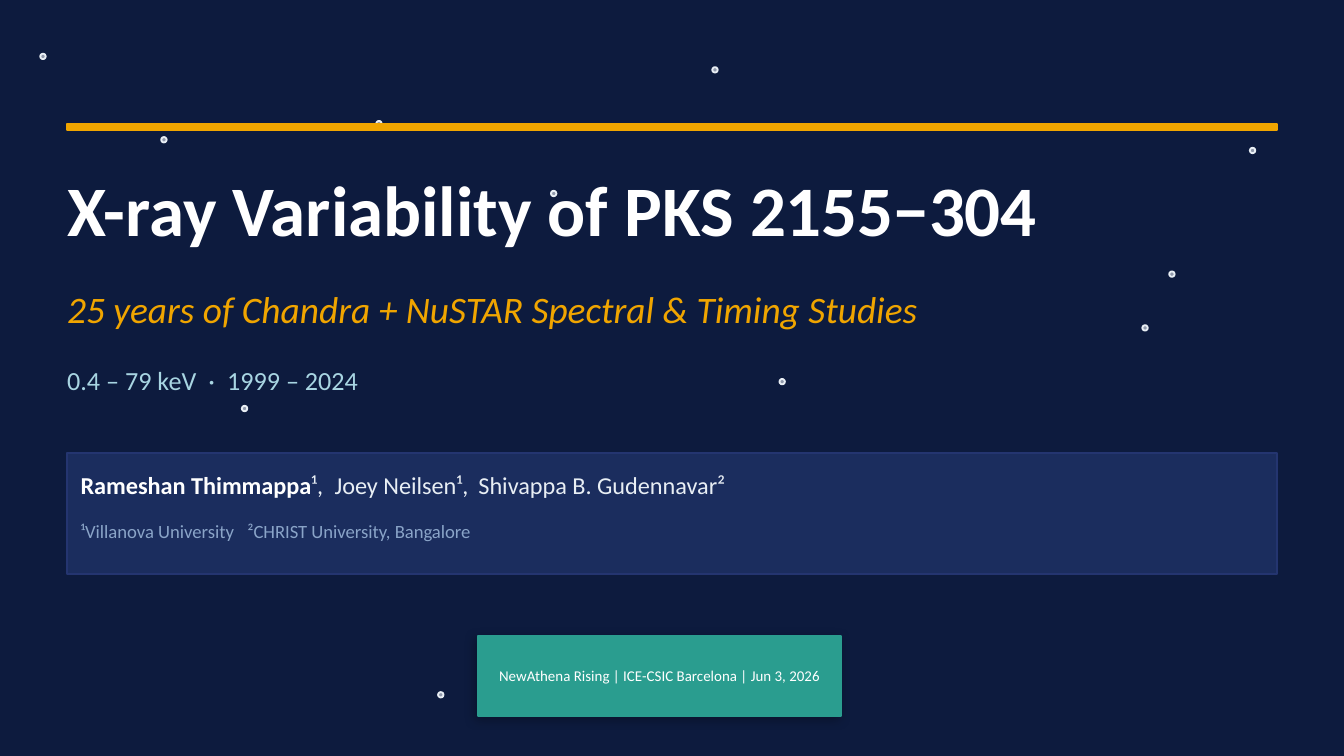
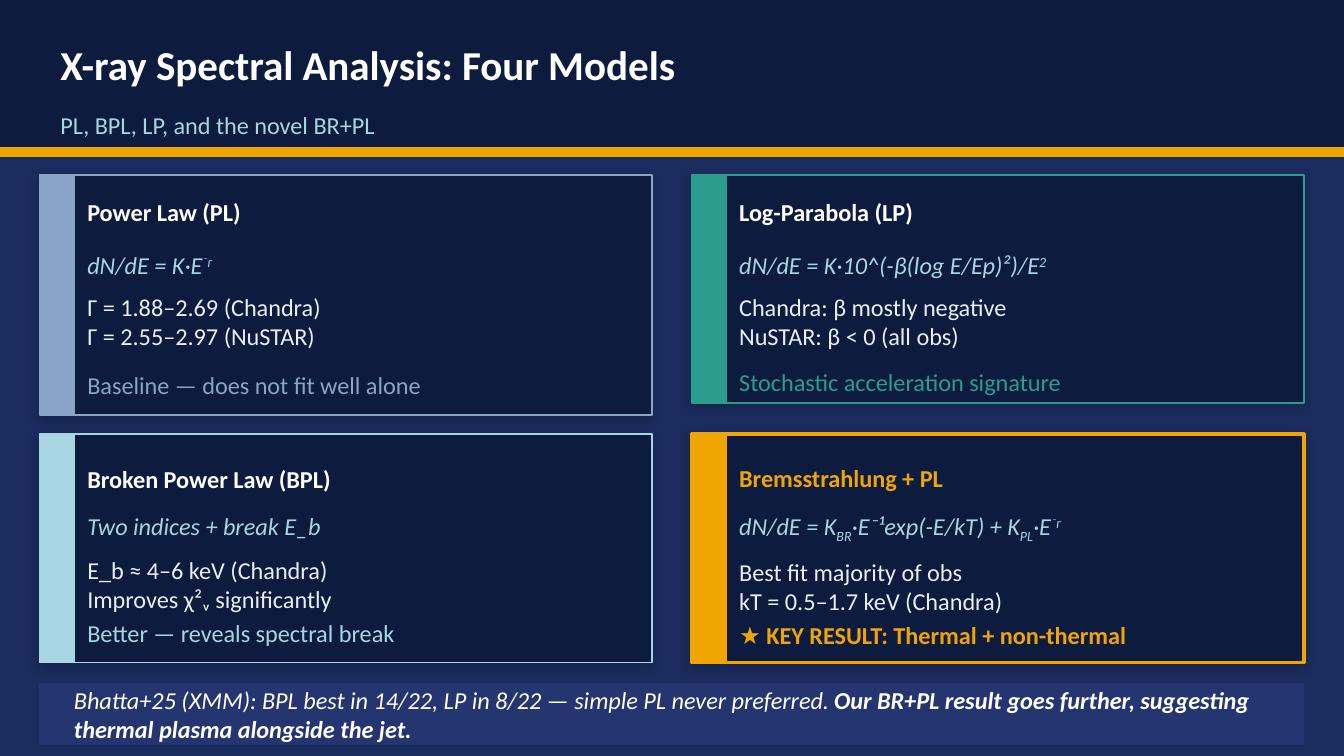
from dataclasses import dataclass
from typing import NamedTuple

import lxml.etree
import pptx
import pptx.dml.color
import pptx.enum.shapes
import pptx.enum.text
import pptx.oxml.ns
import pptx.presentation
import pptx.shapes.autoshape
import pptx.slide
import pptx.text.text
import pptx.util

# Grid of square cells, ten to the inch
COLUMNS, ROWS = 100, 56.25
CELL = pptx.util.Inches(0.1)
BLANK_LAYOUT = 6


# Theme
@dataclass(frozen=True)
class Theme:
    font: str = "Calibri"
    navy: str = "0D1B3E"
    indigo: str = "1B2D5E"
    blue: str = "243570"
    amber: str = "F0A500"
    teal: str = "2A9D8F"
    sky: str = "A8D5E2"
    slate: str = "8AA4C8"
    mist: str = "E8EEF4"
    white: str = "FFFFFF"
    shadow: str = "000000"
    cover_title: float = 38
    title: float = 22
    cover_subtitle: float = 20
    tagline: float = 14
    body: float = 13
    small: float = 10
    tiny: float = 8


THEME = Theme()


# Descriptions of repeated elements, lengths in grid cells
class Frame(NamedTuple):
    left: float
    top: float
    width: float
    height: float


@dataclass(frozen=True)
class Run:
    text: str
    bold: bool | None = None
    color: str | None = None
    baseline: int = 0


Line = list[Run]


@dataclass(frozen=True)
class ModelCard:
    panel: Frame
    color: str
    text_tops: tuple[float, float, float, float]
    heading: str
    formula: Line
    findings: tuple[str, str]
    verdict: str
    key: bool = False


# Drawing functions
def child(parent: lxml.etree._Element, tag: str, **attributes: object) -> lxml.etree._Element:
    element = lxml.etree.SubElement(parent, pptx.oxml.ns.qn(tag))
    for name, value in attributes.items():
        element.set(name, str(value))
    return element


def rgb(color: str) -> pptx.dml.color.RGBColor:
    return pptx.dml.color.RGBColor.from_string(color)


def place(frame: Frame) -> list[int]:
    return [round(length * CELL) for length in frame]


def add_block(
    slide: pptx.slide.Slide,
    frame: Frame,
    fill: str,
    *,
    line: str | None = None,
    line_width: float = 1,
    opacity: int = 100,
    shadow: int = 0,
    kind: pptx.enum.shapes.MSO_SHAPE = pptx.enum.shapes.MSO_SHAPE.RECTANGLE,
) -> pptx.shapes.autoshape.Shape:
    shape = slide.shapes.add_shape(kind, *place(frame))
    shape.fill.solid()
    shape.fill.fore_color.rgb = rgb(fill)
    shape.line.color.rgb = rgb(line or fill)
    shape.line.width = pptx.util.Pt(line_width)
    shape.shadow.inherit = False
    properties = shape._element.spPr
    if opacity < 100:
        color = properties.find(pptx.oxml.ns.qn("a:solidFill"))[0]
        child(color, "a:alpha", val=opacity * 1000)
    if shadow:
        effects = properties.find(pptx.oxml.ns.qn("a:effectLst"))
        outer = child(
            effects, "a:outerShdw", blurRad=pptx.util.Pt(6), dist=pptx.util.Pt(2),
            dir=135 * 60000, algn="bl", rotWithShape=0,
        )
        color = child(outer, "a:srgbClr", val=THEME.shadow)
        child(color, "a:alpha", val=shadow * 1000)
    return shape


def add_text(
    slide: pptx.slide.Slide,
    frame: Frame,
    *lines: str | Line,
    size: float = THEME.body,
    color: str = THEME.white,
    bold: bool = False,
    italic: bool = False,
    align: pptx.enum.text.PP_ALIGN | None = None,
    tabs: tuple[float, ...] = (),
) -> None:
    text_frame = slide.shapes.add_textbox(*place(frame)).text_frame
    text_frame.word_wrap = True
    text_frame.vertical_anchor = pptx.enum.text.MSO_ANCHOR.MIDDLE
    text_frame.margin_left = text_frame.margin_right = 0
    text_frame.margin_top = text_frame.margin_bottom = 0
    for index, line in enumerate(lines):
        paragraph = text_frame.add_paragraph() if index else text_frame.paragraphs[0]
        if align is not None:
            paragraph.alignment = align
        if tabs:
            tab_list = child(paragraph._p.get_or_add_pPr(), "a:tabLst")
            for position in tabs:
                child(tab_list, "a:tab", pos=round(position * CELL), algn="l")
        for part in [Run(line)] if isinstance(line, str) else line:
            run = paragraph.add_run()
            run.text = part.text
            run.font.name = THEME.font
            run.font.size = pptx.util.Pt(size)
            run.font.color.rgb = rgb(part.color or color)
            run.font.bold = bold if part.bold is None else part.bold
            run.font.italic = italic
            if part.baseline:
                run._r.get_or_add_rPr().set("baseline", str(part.baseline * 1000))


def add_slide(
    presentation: pptx.presentation.Presentation, background: str
) -> pptx.slide.Slide:
    slide = presentation.slides.add_slide(presentation.slide_layouts[BLANK_LAYOUT])
    slide.background.fill.solid()
    slide.background.fill.fore_color.rgb = rgb(background)
    return slide


def add_header(slide: pptx.slide.Slide, title: str, subtitle: str) -> None:
    add_block(slide, Frame(0, 0, COLUMNS, 11), THEME.navy)
    add_text(slide, Frame(4.5, 1, 91, 7.5), title, size=THEME.title, bold=True)
    add_text(slide, Frame(4.5, 7.8, 91, 3), subtitle, color=THEME.sky)
    add_block(slide, Frame(0, 11, COLUMNS, 0.6), THEME.amber)


def add_model_card(slide: pptx.slide.Slide, card: ModelCard) -> None:
    panel = card.panel
    add_block(
        slide, panel, THEME.navy, line=card.color,
        line_width=2 if card.key else 1, shadow=20,
    )
    add_block(slide, panel._replace(width=2.5), card.color)
    heading, formula, findings, verdict = (
        Frame(panel.left + 3.5, top, 41, height)
        for top, height in zip(card.text_tops, (3.5, 3.8, 4.2, 3.2))
    )
    heading_color = card.color if card.key else THEME.white
    add_text(slide, heading, card.heading, color=heading_color, bold=True)
    add_text(slide, formula, card.formula, color=THEME.sky, italic=True)
    add_text(slide, findings, *card.findings, color=THEME.mist)
    add_text(slide, verdict, card.verdict, color=card.color, bold=card.key)


# Slide content
STARS = [
    (3, 4), (12, 10.2), (28, 9), (41, 14.2), (53, 5), (32.6, 51.5),
    (87, 20.2), (93, 11), (18, 30.2), (58, 28.2), (85, 24.2),
]
LEFT, RIGHT, CARD_WIDTH = 3, 51.5, 45.5
UPPER, LOWER, CARD_HEIGHT = 13, 32.3, 17
EXPONENT = Run("⁻ᴦ", baseline=30)

MODEL_CARDS = [
    ModelCard(
        Frame(LEFT, UPPER, CARD_WIDTH, 17.9), THEME.slate, (14, 17.8, 21.8, 27),
        "Power Law (PL)",
        [Run("dN/dE = K·E"), EXPONENT],
        ("Γ = 1.88–2.69 (Chandra)", "Γ = 2.55–2.97 (NuSTAR)"),
        "Baseline — does not fit well alone",
    ),
    ModelCard(
        Frame(LEFT, LOWER, CARD_WIDTH, CARD_HEIGHT), THEME.sky, (33.9, 37.2, 41.4, 45.5),
        "Broken Power Law (BPL)",
        [Run("Two indices + break E_b")],
        ("E_b ≈ 4–6 keV (Chandra)", "Improves χ²ᵥ significantly"),
        "Better — reveals spectral break",
    ),
    ModelCard(
        Frame(RIGHT, UPPER, CARD_WIDTH, CARD_HEIGHT), THEME.teal, (14, 17.8, 21.8, 26.8),
        "Log-Parabola (LP)",
        [Run("dN/dE = K·10^(-β(log E/Ep)²)/E"), Run("2", baseline=30)],
        ("Chandra: β mostly negative", "NuSTAR: β < 0 (all obs)"),
        "Stochastic acceleration signature",
    ),
    ModelCard(
        Frame(RIGHT, LOWER, CARD_WIDTH, CARD_HEIGHT), THEME.amber, (33.8, 37.4, 41.5, 45.6),
        "Bremsstrahlung + PL",
        [
            Run("dN/dE = K"), Run("BR", baseline=-25),
            Run("·E⁻¹exp(-E/kT) + K"), Run("PL", baseline=-25),
            Run("·E"), EXPONENT,
        ],
        ("Best fit majority of obs", "kT = 0.5–1.7 keV (Chandra)"),
        "★ KEY RESULT: Thermal + non-thermal",
        key=True,
    ),
]


def build_cover(presentation: pptx.presentation.Presentation) -> None:
    slide = add_slide(presentation, THEME.navy)
    # Star field and rule
    for left, top in STARS:
        add_block(
            slide, Frame(left, top, 0.4, 0.4), THEME.mist, opacity=60,
            kind=pptx.enum.shapes.MSO_SHAPE.OVAL,
        )
    add_block(slide, Frame(5, 9.2, 90, 0.5), THEME.amber)
    # Event badge
    add_block(slide, Frame(35.6, 47.3, 27, 6), THEME.teal, shadow=30)
    add_text(
        slide, Frame(35.6, 47.5, 27, 5.6),
        "NewAthena Rising | ICE-CSIC Barcelona | Jun 3, 2026",
        size=THEME.tiny, align=pptx.enum.text.PP_ALIGN.CENTER,
    )
    # Titles
    add_text(
        slide, Frame(5, 10.7, 90, 9.5), "X-ray Variability of PKS 2155−304",
        size=THEME.cover_title, bold=True,
    )
    add_text(
        slide, Frame(5, 20.2, 90, 5.5),
        "25 years of Chandra + NuSTAR Spectral & Timing Studies",
        size=THEME.cover_subtitle, color=THEME.amber, italic=True,
    )
    add_text(
        slide, Frame(5, 26.4, 50, 3.8), "0.4 – 79 keV\t·\t1999 – 2024",
        size=THEME.tagline, color=THEME.sky, tabs=(10.5, 11.9),
    )
    # Authors
    add_block(slide, Frame(5, 33.7, 90, 9), THEME.indigo, line=THEME.blue)
    add_text(
        slide, Frame(6, 34.2, 88, 3.8),
        [
            Run("Rameshan Thimmappa", bold=True, color=THEME.white),
            Run("¹,\tJoey Neilsen¹,\tShivappa B. Gudennavar²"),
        ],
        color=THEME.mist, tabs=(18.9, 29.6),
    )
    add_text(
        slide, Frame(6, 38, 88, 3),
        "¹Villanova University\t²CHRIST University, Bangalore",
        size=THEME.small, color=THEME.slate, tabs=(12.4,),
    )


def build_models(presentation: pptx.presentation.Presentation) -> None:
    slide = add_slide(presentation, THEME.indigo)
    add_header(
        slide, "X-ray Spectral Analysis: Four Models", "PL, BPL, LP, and the novel BR+PL"
    )
    for card in MODEL_CARDS:
        add_model_card(slide, card)
    # Closing remark
    add_block(slide, Frame(LEFT, 50.9, 94, 4.5), THEME.blue)
    add_text(
        slide, Frame(5.5, 51.3, 91.5, 3.7),
        [
            Run("Bhatta+25 (XMM): BPL best in 14/22, LP in 8/22 — simple PL never preferred. "),
            Run("Our BR+PL result goes further, suggesting thermal plasma alongside the jet.", bold=True),
        ],
        italic=True,
    )


def main() -> None:
    presentation = pptx.Presentation()
    presentation.slide_width = round(COLUMNS * CELL)
    presentation.slide_height = round(ROWS * CELL)
    build_cover(presentation)
    build_models(presentation)
    presentation.save("out.pptx")


if __name__ == "__main__":
    main()
